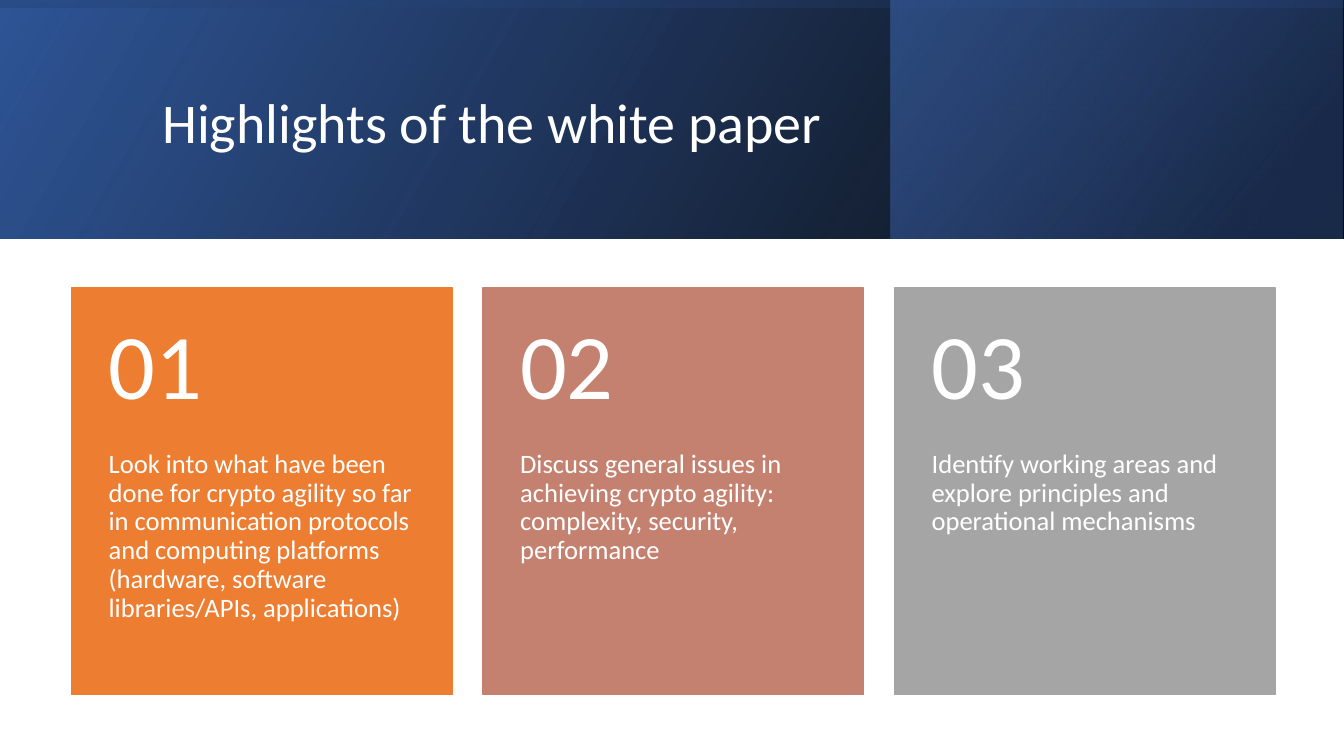
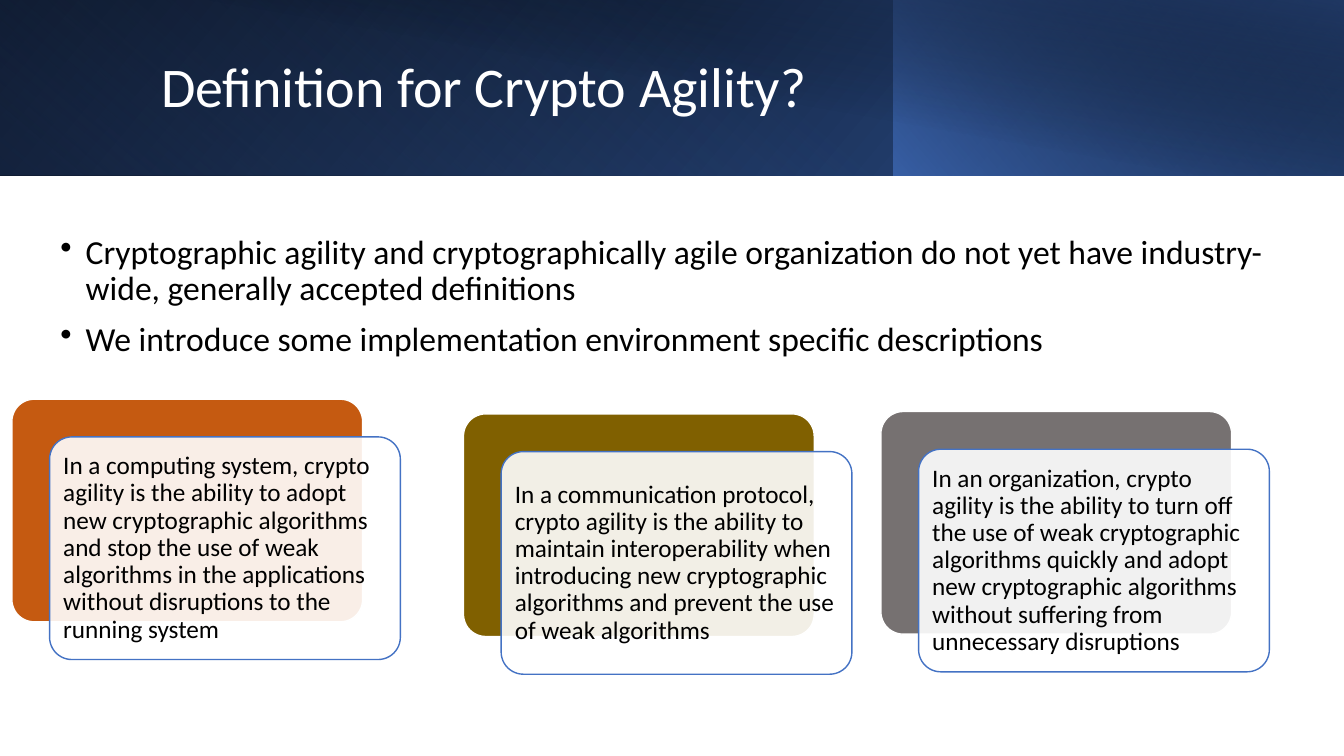
from lxml import etree
from pptx import Presentation
from pptx.dml.color import RGBColor
from pptx.enum import shapes, text
from pptx.oxml import ns
from pptx.util import Cm, Pt

FONT = "Calibri"
WHITE, BLACK = "FFFFFF", "000000"
BLUE, NAVY, ACCENT = "2F5597", "203864", "4472C4"
RECT = shapes.MSO_SHAPE.RECTANGLE
ROUNDED = shapes.MSO_SHAPE.ROUNDED_RECTANGLE
TOP, MIDDLE = text.MSO_ANCHOR.TOP, text.MSO_ANCHOR.MIDDLE
SLIDE_WIDTH, SLIDE_HEIGHT = 33.87, 19.05

HIGHLIGHTS = [
    ("ED7D31", "Look into what have been done for crypto agility so far in communication "
               "protocols and computing platforms (hardware, software libraries/APIs, applications)"),
    ("C48170", "Discuss general issues in achieving crypto agility: complexity, security, performance"),
    ("A5A5A5", "Identify working areas and explore principles and operational mechanisms"),
]
BULLETS = [
    "Cryptographic agility and cryptographically agile organization do not yet have "
    "industry-wide, generally accepted definitions",
    "We introduce some implementation environment specific descriptions",
]
DEFINITIONS = [
    (0.3, 10.06, "C55A11",
     "In a computing system, crypto agility is the ability to adopt new cryptographic algorithms "
     "and stop the use of weak algorithms in the applications without disruptions to the running system"),
    (11.68, 10.43, "806000",
     "In a communication protocol, crypto agility is the ability to maintain interoperability when "
     "introducing new cryptographic algorithms and prevent the use of weak algorithms"),
    (22.2, 10.37, "767171",
     "In an organization, crypto agility is the ability to turn off the use of weak cryptographic "
     "algorithms quickly and adopt new cryptographic algorithms without suffering from "
     "unnecessary disruptions"),
]


def color(value):
    return RGBColor.from_string(value)


def add_child(parent, tag, **attributes):
    return etree.SubElement(parent, ns.qn(tag), attributes)


def add_alpha(color_element, percent):
    add_child(color_element, "a:alpha", val=str(percent * 1000))


def add_box(page, kind, place, fill=None, line=None, alpha=100):
    box = page.shapes.add_shape(kind, *map(Cm, place))
    box.shadow.inherit = False
    if fill:
        box.fill.solid()
        box.fill.fore_color.rgb = color(fill)
        if alpha < 100:
            add_alpha(box.fill._xPr.find(".//" + ns.qn("a:srgbClr")), alpha)
    if line:
        box.line.color.rgb = color(line)
        box.line.width = Pt(1)
    else:
        box.line.fill.background()
    return box


def add_gradient(page, place, stops, angle, flip=True, rotation=0):
    box = add_box(page, RECT, place)
    box.rotation = rotation
    box.fill.gradient()
    properties = box._element.spPr
    if flip:
        properties.find(ns.qn("a:xfrm")).set("flipH", "1")
    gradient = properties.find(ns.qn("a:gradFill"))
    stop_list = gradient.find(ns.qn("a:gsLst"))
    for old_stop in list(stop_list):
        stop_list.remove(old_stop)
    for position, value, alpha in stops:
        stop = add_child(stop_list, "a:gs", pos=str(position * 1000))
        add_alpha(add_child(stop, "a:srgbClr", val=value), alpha)
    gradient.find(ns.qn("a:lin")).set("ang", str(angle * 60000))


def write(box, lines, size, ink, anchor=MIDDLE, insets=(0.25, 0.13, 0.25, 0.13), bullets=False):
    frame = box.text_frame
    frame.word_wrap = True
    frame.vertical_anchor = anchor
    frame.margin_left, frame.margin_top, frame.margin_right, frame.margin_bottom = map(Cm, insets)
    frame.text = "\n".join(lines)
    for para in frame.paragraphs:
        para.alignment = text.PP_ALIGN.LEFT
        para.line_spacing = 0.9
        para.font.name = FONT
        para.font.size = Pt(size)
        para.font.color.rgb = color(ink)
        if bullets:
            para.space_before = Pt(10)
            properties = para._p.get_or_add_pPr()
            properties.set("marL", str(Cm(0.64)))
            properties.set("indent", str(-Cm(0.64)))
            bullet = etree.Element(ns.qn("a:buChar"), char="•")
            properties.find(ns.qn("a:defRPr")).addprevious(bullet)


def add_text(page, place, lines, size, ink, **options):
    write(page.shapes.add_textbox(*map(Cm, place)), lines, size, ink, **options)


def add_title(page, place, title):
    add_text(page, place, [title], 40, WHITE)


def add_highlight(page, index, fill, description):
    left, top, width, height, number_height = 1.8 + index * 10.37, 7.26, 9.6, 10.24, 4.09
    add_box(page, RECT, (left, top, width, height), fill, fill)
    add_text(page, (left, top + number_height, width, height - number_height), [description],
             19, WHITE, anchor=TOP, insets=(0.94, 0, 0.94, 0.91))
    add_text(page, (left, top, width, number_height), [f"{index + 1:02}"],
             66, WHITE, insets=(0.94, 0.46, 0.94, 0.46))


def add_definition(page, left, top, fill, description):
    width, height, offset = 8.84, 5.61, 0.95
    back = add_box(page, ROUNDED, (left, top, width, height), fill, WHITE)
    front = add_box(page, ROUNDED, (left + offset, top + offset, width, height), WHITE, ACCENT, 90)
    for box in (back, front):
        box.adjustments[0] = 0.1
    write(front, [description], 18, BLACK, insets=(0.18,) * 4)


def build_highlights(page):
    height = 6.02
    add_gradient(page, (0, 0, SLIDE_WIDTH, height), [(0, BLACK, 96), (100, BLUE, 100)], 330)
    add_gradient(page, (22.45, 0, 11.38, height), [(19, NAVY, 68), (100, ACCENT, 48)], 320)
    add_gradient(page, (13.92, -13.92, height, SLIDE_WIDTH), [(23, BLUE, 16), (99, BLACK, 45)],
                 350, rotation=270)
    add_title(page, (3.84, 0.97, 27, 4.37), "Highlights of the white paper")
    for index, (fill, description) in enumerate(HIGHLIGHTS):
        add_highlight(page, index, fill, description)


def build_definitions(page):
    height, split = 4.43, 22.53
    add_gradient(page, (0, 0, SLIDE_WIDTH, height), [(0, BLACK, 100), (100, BLUE, 100)], 140)
    add_gradient(page, (0, 0, split, height), [(20, ACCENT, 0), (100, NAVY, 55)], 230, rotation=180)
    add_gradient(page, (split, 0, SLIDE_WIDTH - split, height),
                 [(0, ACCENT, 66), (100, BLACK, 30)], 220)
    add_gradient(page, (1.27, 0, SLIDE_WIDTH - 1.27, height),
                 [(50, BLACK, 0), (99, NAVY, 52)], 280, flip=False)
    add_title(page, (3.81, 0.81, 27.48, 2.87), "Definition for Crypto Agility?")
    add_text(page, (1.27, 4.93, 31.04, 5.1), BULLETS, 24, BLACK, bullets=True)
    for definition in DEFINITIONS:
        add_definition(page, *definition)


def main():
    deck = Presentation()
    deck.slide_width, deck.slide_height = Cm(SLIDE_WIDTH), Cm(SLIDE_HEIGHT)
    for build in (build_highlights, build_definitions):
        build(deck.slides.add_slide(deck.slide_layouts[6]))
    deck.save("out.pptx")


if __name__ == "__main__":
    main()
